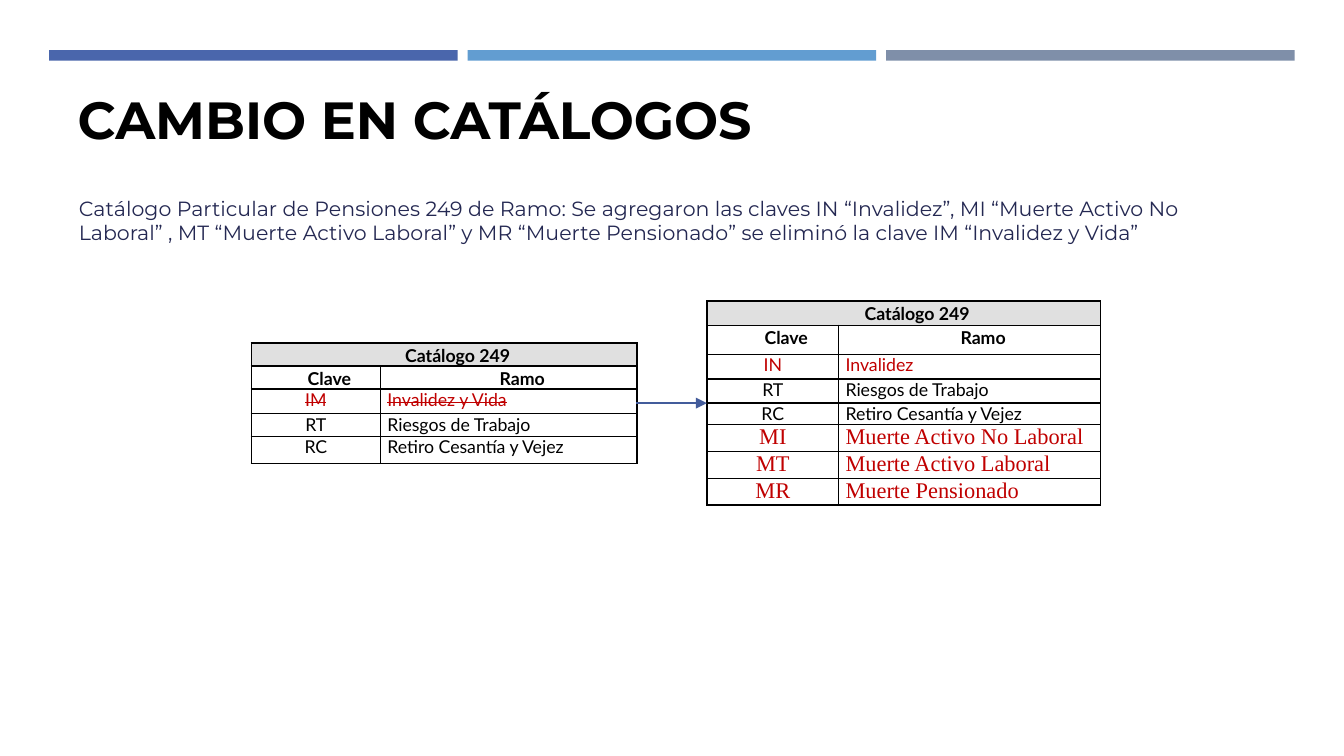
from lxml import etree
from pptx import Presentation
from pptx.dml.color import RGBColor
from pptx.enum.shapes import MSO_CONNECTOR, MSO_SHAPE
from pptx.enum.text import PP_ALIGN
from pptx.oxml.ns import qn
from pptx.util import Cm, Pt

LINE = MSO_CONNECTOR.STRAIGHT
RECT = MSO_SHAPE.RECTANGLE
LEFT, MID = PP_ALIGN.LEFT, PP_ALIGN.CENTER

COLORS = {"blue": "4A66AC", "sky": "629DD1", "slate": "7F8FA9", "navy": "242852",
          "black": "000000", "red": "C00000", "gray": "E0E0E0", "arrow": "435C9B"}

# Content
TITLE = "CAMBIO EN CATÁLOGOS"
BODY = ("Catálogo Particular de Pensiones 249 de Ramo: Se agregaron las claves "
        "IN “Invalidez”, MI “Muerte Activo No Laboral” , MT “Muerte Activo Laboral” "
        "y MR “Muerte Pensionado” se eliminó la clave IM “Invalidez y Vida”")
HEAD = [("Catálogo 249", "", "band"), ("Clave", "Ramo", "head")]
KEPT = [("RT", "Riesgos de Trabajo", "kept"), ("RC", "Retiro Cesantía y Vejez", "kept")]
OLD = HEAD + [("IM", "Invalidez y Vida", "gone")] + KEPT
NEW = HEAD + [("IN", "Invalidez", "new")] + KEPT + [
    ("MI", "Muerte Activo No Laboral", "late"),
    ("MT", "Muerte Activo Laboral", "late"),
    ("MR", "Muerte Pensionado", "late")]

# Row kinds: font, size, color
STYLES = {"band": ("Lato", 9.5, "black"), "head": ("Lato", 9.5, "black"),
          "kept": ("Lato", 9.5, "black"), "gone": ("Lato", 9.5, "red"),
          "new": ("Lato", 9.5, "red"), "late": ("Times New Roman", 12, "red")}

# Tables: rows, left, top, column widths, row heights (cm)
TABLES = [
    (NEW, 13.36, 5.69, (2.49, 4.95), (0.46, 0.55, 0.46, 0.46, 0.39, 0.44, 0.44, 0.44)),
    (OLD, 4.75, 6.48, (2.44, 4.85), (0.42, 0.44, 0.46, 0.43, 0.51))]


def rgb(name):
    return RGBColor.from_string(COLORS[name])


def style(para, face, size, color, bold=False):
    for run in para.runs:
        font = run.font
        font.name, font.size, font.bold = face, Pt(size), bold
        font.color.rgb = rgb(color)


def add_text(slide, text, box, size, color, bold=False):
    frame = slide.shapes.add_textbox(*map(Cm, box)).text_frame
    frame.word_wrap = True
    frame.margin_left = frame.margin_right = Cm(0.25)
    frame.margin_top = frame.margin_bottom = Cm(0.25)
    frame.text = text
    style(frame.paragraphs[0], "Montserrat", size, color, bold)
    return frame.paragraphs[0]


def add_edges(cell):
    props = cell._tc.get_or_add_tcPr()
    for spot, side in enumerate(("lnL", "lnR", "lnT", "lnB")):
        edge = etree.Element(qn("a:" + side), w=str(Pt(1)))
        fill = etree.SubElement(edge, qn("a:solidFill"))
        etree.SubElement(fill, qn("a:srgbClr"), val=COLORS["black"])
        props.insert(spot, edge)


def fill_cell(cell, text, kind, col):
    cell.margin_left = cell.margin_right = Cm(0.13)
    cell.margin_top = cell.margin_bottom = 0
    if kind == "band":
        cell.fill.solid()
        cell.fill.fore_color.rgb = rgb("gray")
    else:
        cell.fill.background()
    add_edges(cell)
    if not text:
        return
    top = kind in ("band", "head")
    para = cell.text_frame.paragraphs[0]
    para.text = text
    para.alignment = MID if top or col == 0 else LEFT
    style(para, *STYLES[kind], bold=top)
    if top:
        para.line_spacing, para.space_after = Pt(12.4), Pt(5)
        para._p.get_or_add_pPr().set("indent", str(Cm(0.51)))
    if kind == "gone":
        para.runs[0].font._element.set("strike", "sngStrike")


def add_grid(slide, rows, left, top, cols, highs):
    grid = slide.shapes.add_table(len(rows), len(cols), Cm(left), Cm(top),
                                  Cm(sum(cols)), Cm(sum(highs))).table
    grid.first_row = grid.horz_banding = False
    for col, wide in enumerate(cols):
        grid.columns[col].width = Cm(wide)
    for row, (key, name, kind) in enumerate(rows):
        grid.rows[row].height = Cm(highs[row])
        for col, text in enumerate((key, name)):
            fill_cell(grid.cell(row, col), text, kind, col)
    grid.cell(0, 0).merge(grid.cell(0, 1))


def add_arrow(slide, start, end, y):
    arrow = slide.shapes.add_connector(LINE, Cm(start), Cm(y), Cm(end), Cm(y))
    arrow.line.color.rgb = rgb("arrow")
    arrow.line.width = Pt(1)
    etree.SubElement(arrow.line._get_or_add_ln(), qn("a:tailEnd"), type="triangle")
    etree.SubElement(arrow._element.spPr, qn("a:effectLst"))


def main():
    deck = Presentation()
    deck.slide_width, deck.slide_height = Cm(25.4), Cm(14.29)
    slide = deck.slides.add_slide(deck.slide_layouts[6])

    # Top bars
    for spot, color in enumerate(("blue", "sky", "slate")):
        bar = slide.shapes.add_shape(RECT, Cm(0.93 + 7.91 * spot), Cm(0.95),
                                     Cm(7.72), Cm(0.2))
        bar.shadow.inherit = False
        bar.fill.solid()
        bar.fill.fore_color.rgb = rgb(color)
        bar.line.fill.background()

    # Title and body
    add_text(slide, TITLE, (1.22, 1.4, 23.27, 2.46), 28, "black", True)
    para = add_text(slide, BODY, (0.94, 3.45, 23.27, 1.96), 11, "navy")
    para._p.get_or_add_pPr().set("marL", str(Cm(0.3)))

    # Catalogs and the arrow between them
    for table in TABLES:
        add_grid(slide, *table)
    add_arrow(slide, 12.02, 13.36, 7.62)

    deck.save("out.pptx")


if __name__ == "__main__":
    main()
